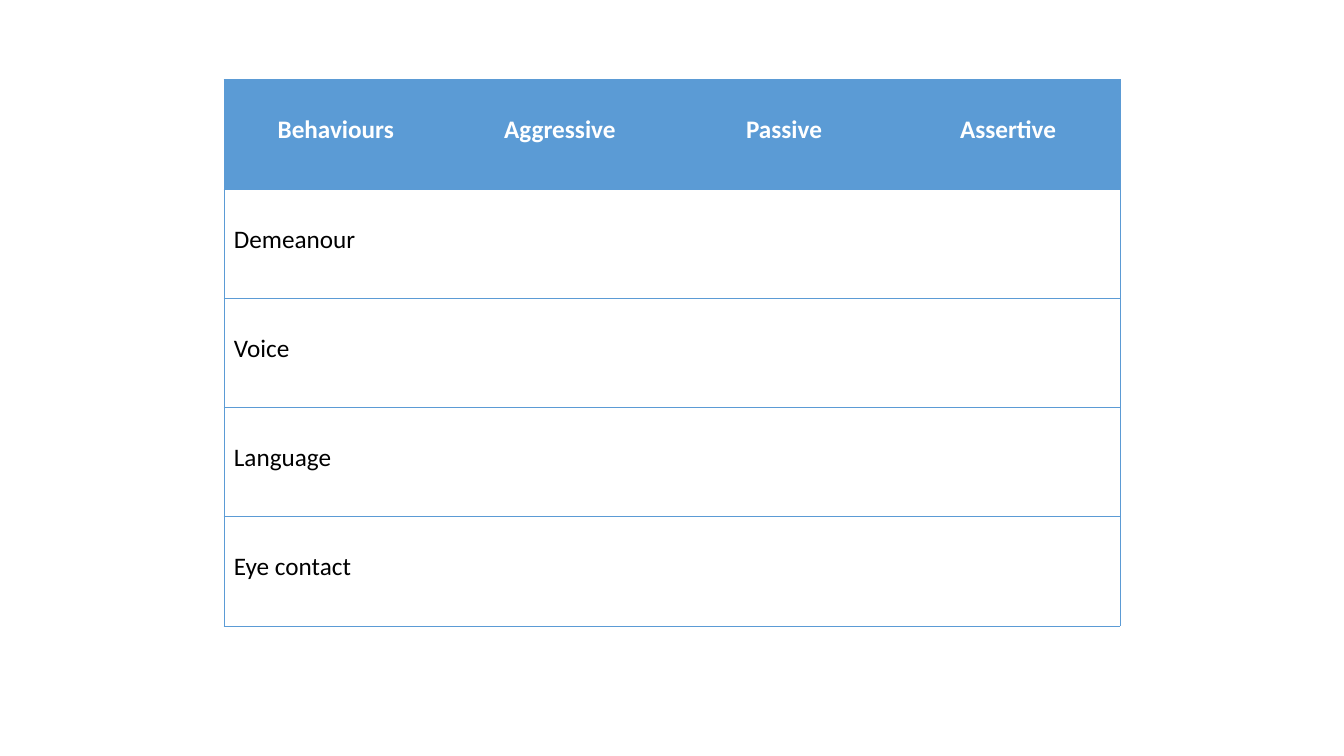
"""Build a blank worksheet table comparing behaviours across three styles."""
from lxml import etree
from pptx import Presentation
from pptx.dml.color import RGBColor
from pptx.enum.text import MSO_ANCHOR, PP_ALIGN
from pptx.oxml.ns import qn
from pptx.util import Inches, Pt

TOP = MSO_ANCHOR.TOP
LEFT, CENTER = PP_ALIGN.LEFT, PP_ALIGN.CENTER
PLAIN_GRID = "{2D5ABB26-0587-4C30-8999-92F81FD0307C}"
STYLES = ["Behaviours", "Aggressive", "Passive", "Assertive"]
BEHAVIOURS = ["Demeanour", "Voice", "Language", "Eye contact"]


def rgb(value):
    return RGBColor.from_string(value)


class Worksheet:
    blue, white, black = "5B9BD5", "FFFFFF", "000000"
    font, size, rule = "Calibri", 18, 0.5

    def __init__(self, slide):
        self.slide = slide

    def border(self, cell, side):
        line = etree.SubElement(cell._tc.get_or_add_tcPr(), qn(f"a:ln{side}"), w=str(Pt(self.rule)))
        fill = etree.SubElement(line, qn("a:solidFill"))
        etree.SubElement(fill, qn("a:srgbClr"), val=self.blue)

    def label(self, cell, text, header):
        paragraph = cell.text_frame.paragraphs[0]
        paragraph.alignment = CENTER if header else LEFT
        run = paragraph.add_run()
        run.text = text
        formats = {"name": self.font, "size": Pt(self.size), "bold": header}
        for name, value in formats.items():
            setattr(run.font, name, value)
        run.font.color.rgb = rgb(self.white if header else self.black)

    def table(self, left, top, width, height, rows):
        last = len(rows[0]) - 1
        grid = self.slide.shapes.add_table(
            len(rows), last + 1, Inches(left), Inches(top), Inches(width), Inches(height)
        ).table
        grid.horz_banding = False
        grid._tbl.tblPr.find(qn("a:tableStyleId")).text = PLAIN_GRID
        layout = {"vertical_anchor": TOP, "margin_top": Inches(0.35)}
        for r, texts in enumerate(rows):
            for c, text in enumerate(texts):
                cell = grid.cell(r, c)
                for name, value in layout.items():
                    setattr(cell, name, value)
                sides = ("L" if c == 0 else "") + ("R" if c == last else "") + "TB"
                for side in sides:
                    self.border(cell, side)
                if r == 0:
                    cell.fill.solid()
                    cell.fill.fore_color.rgb = rgb(self.blue)
                else:
                    cell.fill.background()
                if text:
                    self.label(cell, text, r == 0)


def main():
    deck = Presentation()
    deck.slide_width, deck.slide_height = Inches(13.33), Inches(7.5)
    worksheet = Worksheet(deck.slides.add_slide(deck.slide_layouts[6]))
    blanks = [""] * (len(STYLES) - 1)
    rows = [STYLES] + [[behaviour] + blanks for behaviour in BEHAVIOURS]
    worksheet.table(2.22, 0.79, 8.89, 5.42, rows)
    deck.save("out.pptx")


if __name__ == "__main__":
    main()
